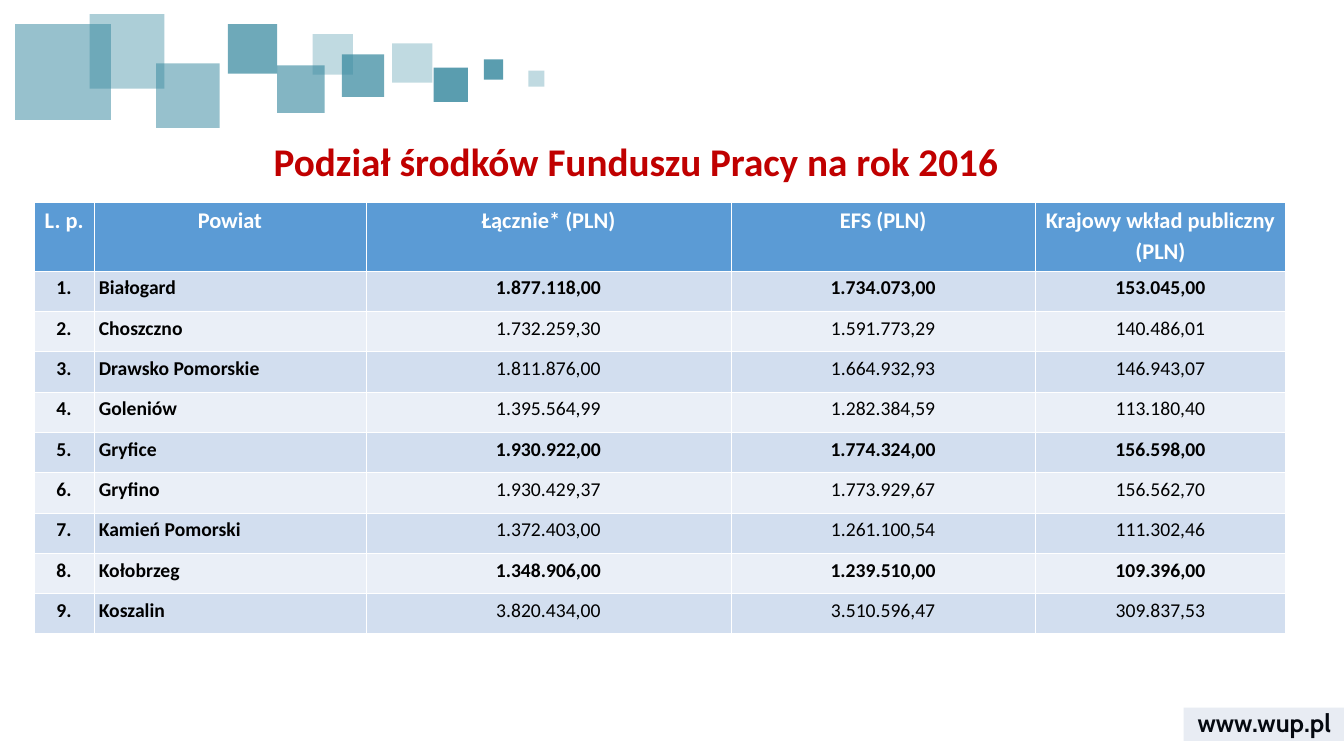
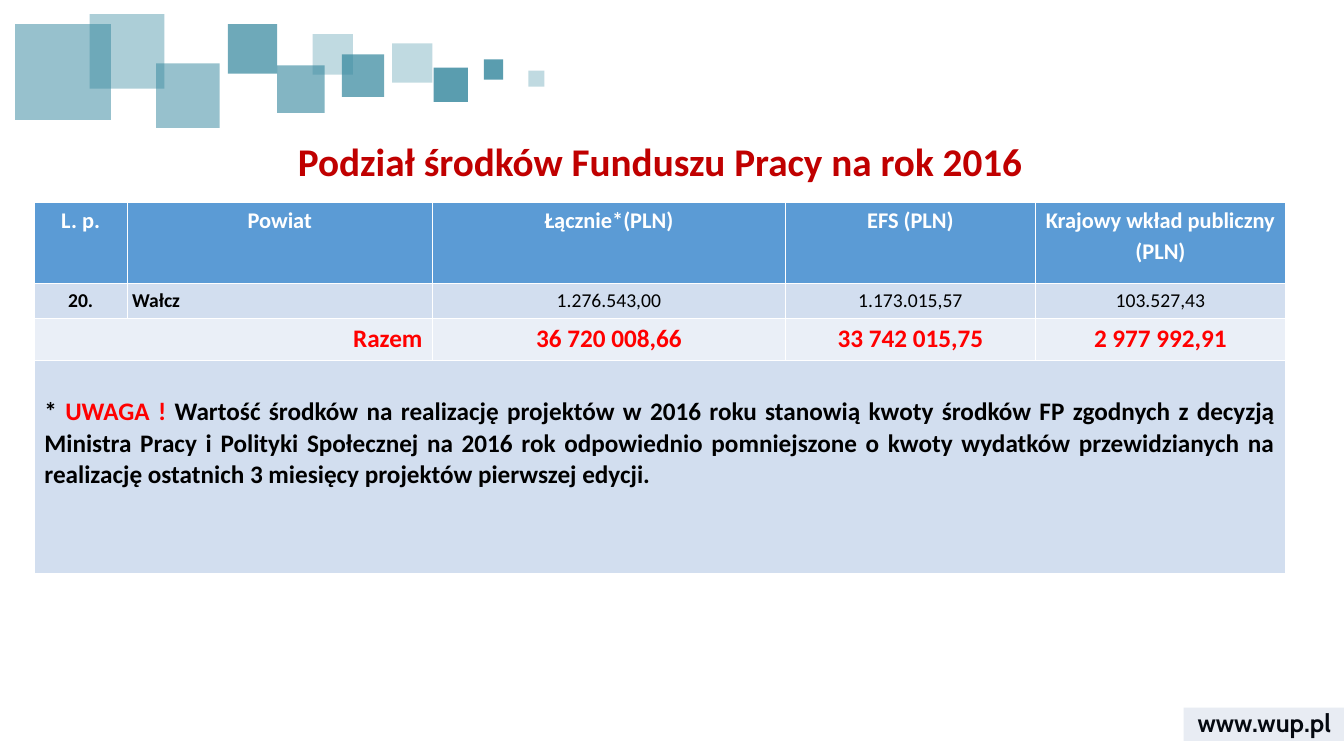
from lxml import etree
from pptx import Presentation
from pptx.dml.color import RGBColor
from pptx.enum.shapes import MSO_SHAPE
from pptx.enum.text import MSO_ANCHOR, MSO_AUTO_SIZE, PP_ALIGN
from pptx.oxml.ns import qn
from pptx.util import Inches, Pt

RECTANGLE = MSO_SHAPE.RECTANGLE
TOP, MIDDLE = MSO_ANCHOR.TOP, MSO_ANCHOR.MIDDLE
LEFT, CENTER, RIGHT, JUSTIFY = PP_ALIGN.LEFT, PP_ALIGN.CENTER, PP_ALIGN.RIGHT, PP_ALIGN.JUSTIFY

TEAL, NAVY, DARK_RED, RED = "31859C", "2F5597", "C00000", "FF0000"
BLACK, WHITE = "000000", "FFFFFF"
HEADER_FILL, BAND_FILLS = "5B9BD5", ("D2DEEF", "EAEFF7")
TITLE = "Podział środków Funduszu Pracy na rok 2016"


def set_color(color_format, value):
    color_format.rgb = RGBColor.from_string(value)


def style_paragraph(paragraph, size, color, bold, align, spacing=None, font_name="Calibri"):
    paragraph.alignment = align
    paragraph.line_spacing = spacing
    paragraph.font.name = font_name
    paragraph.font.size = Pt(size)
    paragraph.font.bold = bold
    set_color(paragraph.font.color, color)


presentation = Presentation()
presentation.slide_width = Inches(13.33)
presentation.slide_height = Inches(7.5)
layout = presentation.slide_layouts[5]
slides = [presentation.slides.add_slide(layout) for _ in range(2)]

footer = slides[0].shapes.add_textbox(Inches(11.74), Inches(6.97), Inches(1.6), Inches(0.4))
footer.text_frame.word_wrap = True
footer.text_frame.vertical_anchor = MIDDLE
footer.text_frame.text = "www.wup.pl"
style_paragraph(footer.text_frame.paragraphs[0], 18, BLACK, True, CENTER, font_name="Cabin")
shared_shapes = [footer]

translucent_rectangles = [
    (3.89, 0.43, 0.4, 0.39, TEAL, 30),
    (4.3, 0.67, 0.34, 0.34, TEAL, 80),
    (3.39, 0.54, 0.42, 0.42, TEAL, 70),
    (0.15, 0.24, 0.95, 0.95, TEAL, 50),
    (2.75, 0.65, 0.47, 0.47, TEAL, 60),
    (1.55, 0.63, 0.63, 0.64, TEAL, 50),
    (0.89, 0.14, 0.74, 0.74, TEAL, 40),
    (4.8, 0.59, 0.19, 0.2, TEAL, 80),
    (2.26, 0.24, 0.49, 0.49, TEAL, 70),
    (3.1, 0.34, 0.4, 0.4, TEAL, 30),
    (5.24, 0.7, 0.16, 0.16, TEAL, 30),
    (11.74, 7.02, 1.6, 0.33, NAVY, 11),
]
for *box, color, opacity in translucent_rectangles:
    rectangle = slides[0].shapes.add_shape(RECTANGLE, *[Inches(length) for length in box])
    rectangle.shadow.inherit = False
    rectangle.line.fill.background()
    rectangle.fill.solid()
    set_color(rectangle.fill.fore_color, color)
    fill_color = rectangle._element.spPr.find(".//" + qn("a:srgbClr"))
    etree.SubElement(fill_color, qn("a:alpha"), val=str(opacity * 1000))
    shared_shapes.append(rectangle)

for number, shape in enumerate(shared_shapes, start=20):
    shape._element.nvSpPr.cNvPr.set("id", str(number))
    layout.shapes._spTree.append(shape._element)

county_rows = [
    ("1.", "Białogard", "1.877.118,00", "1.734.073,00", "153.045,00"),
    ("2.", "Choszczno", "1.732.259,30", "1.591.773,29", "140.486,01"),
    ("3.", "Drawsko Pomorskie", "1.811.876,00", "1.664.932,93", "146.943,07"),
    ("4.", "Goleniów", "1.395.564,99", "1.282.384,59", "113.180,40"),
    ("5.", "Gryfice", "1.930.922,00", "1.774.324,00", "156.598,00"),
    ("6.", "Gryfino", "1.930.429,37", "1.773.929,67", "156.562,70"),
    ("7.", "Kamień Pomorski", "1.372.403,00", "1.261.100,54", "111.302,46"),
    ("8.", "Kołobrzeg", "1.348.906,00", "1.239.510,00", "109.396,00"),
    ("9.", "Koszalin", "3.820.434,00", "3.510.596,47", "309.837,53"),
]
summary_rows = [
    ("20.", "Wałcz", "1.276.543,00", "1.173.015,57", "103.527,43"),
    ("Razem", "", "36 720 008,66", "33 742 015,75", "2 977 992,91"),
    ("", "", "", "", ""),
]
bold_counties = {"Białogard", "Gryfice", "Kołobrzeg"}

slide_contents = [
    (0.1, "Łącznie* (PLN)", county_rows,
     [0.59, 2.7, 3.62, 3.02, 2.48], [0.68] + [0.4] * 8 + [0.39]),
    (0.34, "Łącznie*(PLN)", summary_rows,
     [0.92, 3.03, 3.5, 2.48, 2.48], [0.81, 0.34, 0.42, 2.11]),
]
tables = []
for slide, content in zip(slides, slide_contents):
    title_left, total_heading, data_rows, column_widths, row_heights = content
    title = slide.shapes.title
    title.left, title.top = Inches(title_left), Inches(1.36)
    title.width, title.height = Inches(12.41), Inches(0.55)
    title.text_frame.text = TITLE
    title.text_frame.vertical_anchor = TOP
    title.text_frame.auto_size = MSO_AUTO_SIZE.NONE
    style_paragraph(title.text_frame.paragraphs[0], 28, DARK_RED, True, CENTER, 0.9)

    headings = ("L. p.", "Powiat", total_heading, "EFS (PLN)", "Krajowy wkład publiczny\n(PLN)")
    rows = [headings] + data_rows
    table = slide.shapes.add_table(
        len(rows), len(headings), Inches(0.34), Inches(2),
        Inches(sum(column_widths)), Inches(sum(row_heights))).table
    tables.append(table)
    for column, width in zip(table.columns, column_widths):
        column.width = Inches(width)
    for row, height in zip(table.rows, row_heights):
        row.height = Inches(height)

    for row_index, values in enumerate(rows):
        is_header = row_index == 0
        is_total = values[0] == "Razem"
        if is_header:
            fill, size, color, margin = HEADER_FILL, 16, WHITE, 0.1
        else:
            fill, margin = BAND_FILLS[(row_index - 1) % 2], 0.05
            size, color = (18, RED) if is_total else (14, BLACK)
        for column_index, value in enumerate(values):
            cell = table.cell(row_index, column_index)
            cell.margin_left = cell.margin_right = Inches(margin)
            cell.fill.solid()
            set_color(cell.fill.fore_color, fill)
            for position, side in enumerate(("lnL", "lnR", "lnT", "lnB")):
                border = etree.Element(qn("a:" + side), w="762")
                border_fill = etree.SubElement(border, qn("a:solidFill"))
                etree.SubElement(border_fill, qn("a:srgbClr"), val=WHITE)
                cell._tc.tcPr.insert(position, border)
            if not value:
                continue
            cell.text_frame.text = value
            bold = is_header or is_total or column_index < 2 or values[1] in bold_counties
            align = LEFT if column_index == 1 and not is_header else CENTER
            for line, paragraph in enumerate(cell.text_frame.paragraphs):
                style_paragraph(paragraph, size, color, bold, align, 1.14 if line else 1.02)

summary_table = tables[1]
total_label = summary_table.cell(2, 0)
total_label.merge(summary_table.cell(2, 1))
total_label.margin_left = total_label.margin_right = Inches(0.1)
total_label.text_frame.paragraphs[0].alignment = RIGHT

note = summary_table.cell(3, 0)
note.merge(summary_table.cell(3, 4))
note.margin_left = note.margin_right = Inches(0.1)
note.margin_top = Inches(0.36)
note_paragraph = note.text_frame.paragraphs[0]
style_paragraph(note_paragraph, 18, BLACK, True, JUSTIFY, 1.02)
note_runs = [
    ("* ", BLACK),
    ("UWAGA ! ", RED),
    ("Wartość środków na realizację projektów w 2016 roku stanowią kwoty środków FP "
     "zgodnych z decyzją Ministra Pracy i Polityki Społecznej na 2016 rok odpowiednio "
     "pomniejszone o kwoty wydatków przewidzianych na realizację ostatnich 3 miesięcy "
     "projektów pierwszej edycji.", BLACK),
]
for text, color in note_runs:
    run = note_paragraph.add_run()
    run.text = text
    set_color(run.font.color, color)

presentation.save("out.pptx")
